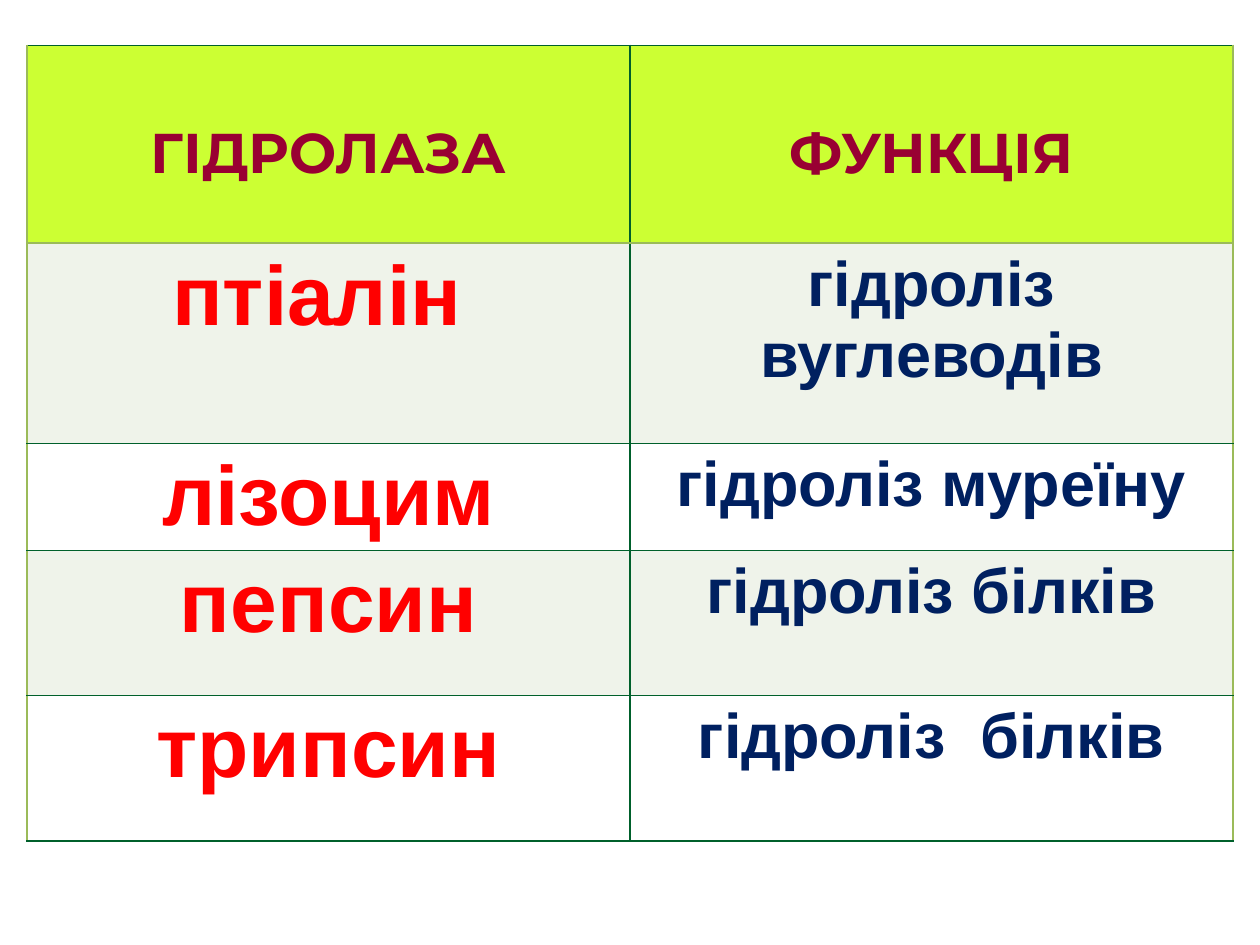
from lxml.etree import SubElement
from pptx import Presentation
from pptx.dml.color import RGBColor as RGB
from pptx.enum.text import PP_ALIGN as Align
from pptx.oxml.ns import qn
from pptx.util import Pt

LIME = RGB(0xCC, 0xFF, 0x33)
MAROON = RGB(0x99, 0x00, 0x33)
RED = RGB(0xFF, 0x00, 0x00)
NAVY = RGB(0x00, 0x20, 0x60)
PALE = RGB(0xEF, 0xF3, 0xEA)
WHITE = RGB(0xFF, 0xFF, 0xFF)
DARK_GREEN = RGB(0x00, 0x60, 0x2B)
LEAF_GREEN = RGB(0x9B, 0xBB, 0x59)

ROWS = [
    ("ГІДРОЛАЗА", "ФУНКЦІЯ"),
    ("птіалін \v", "гідроліз вуглеводів"),
    ("лізоцим", "гідроліз муреїну"),
    ("пепсин", "гідроліз білків"),
    ("трипсин", "гідроліз  білків"),
]
ROW_HEIGHTS = [113, 106, 61, 83, 83]
BODY_STYLES = [("Arial", 48, RED), ("Arial", 36, NAVY)]
HEADER_STYLE = ("Montserrat", 32, MAROON)


def set_borders(cell, colors):
    """Draw the left, right, top and bottom cell borders in the given colours."""
    tc_pr = cell._tc.get_or_add_tcPr()
    for side, color in zip("LRTB", colors):
        ln = SubElement(tc_pr, qn(f"a:ln{side}"), w=str(Pt(1)))
        fill = SubElement(ln, qn("a:solidFill"))
        SubElement(fill, qn("a:srgbClr"), val=str(color))


def fill_cell(cell, text, style, fill):
    """Write centred bold text in a cell and colour its background."""
    cell.fill.solid()
    cell.fill.fore_color.rgb = fill
    cell.text = text
    p = cell.text_frame.paragraphs[0]
    p.alignment = Align.CENTER
    font = p.font
    font.name, size, font.color.rgb = style
    font.size = Pt(size)
    font.bold = True


def add_enzyme_table(slide, left, top, width):
    """Place the table of hydrolases and their functions."""
    shape = slide.shapes.add_table(len(ROWS), 2, Pt(left), Pt(top),
                                   Pt(width), Pt(sum(ROW_HEIGHTS)))
    table = shape.table
    h_lines = [DARK_GREEN, LEAF_GREEN] + [DARK_GREEN] * (len(ROWS) - 1)
    v_lines = [LEAF_GREEN, DARK_GREEN, LEAF_GREEN]
    for i, (texts, height) in enumerate(zip(ROWS, ROW_HEIGHTS)):
        table.rows[i].height = Pt(height)
        for j, text in enumerate(texts):
            cell = table.cell(i, j)
            set_borders(cell, v_lines[j:j + 2] + h_lines[i:i + 2])
            if i == 0:
                fill_cell(cell, text, HEADER_STYLE, LIME)
                cell.margin_top = Pt(42)
            else:
                fill_cell(cell, text, BODY_STYLES[j], PALE if i % 2 else WHITE)


def main():
    """Build the slide and save it."""
    prs = Presentation()
    prs.slide_width, prs.slide_height = Pt(720), Pt(540)
    slide = prs.slides.add_slide(prs.slide_layouts[6])
    add_enzyme_table(slide, 15.5, 26, 689)
    prs.save("out.pptx")


if __name__ == "__main__":
    main()
